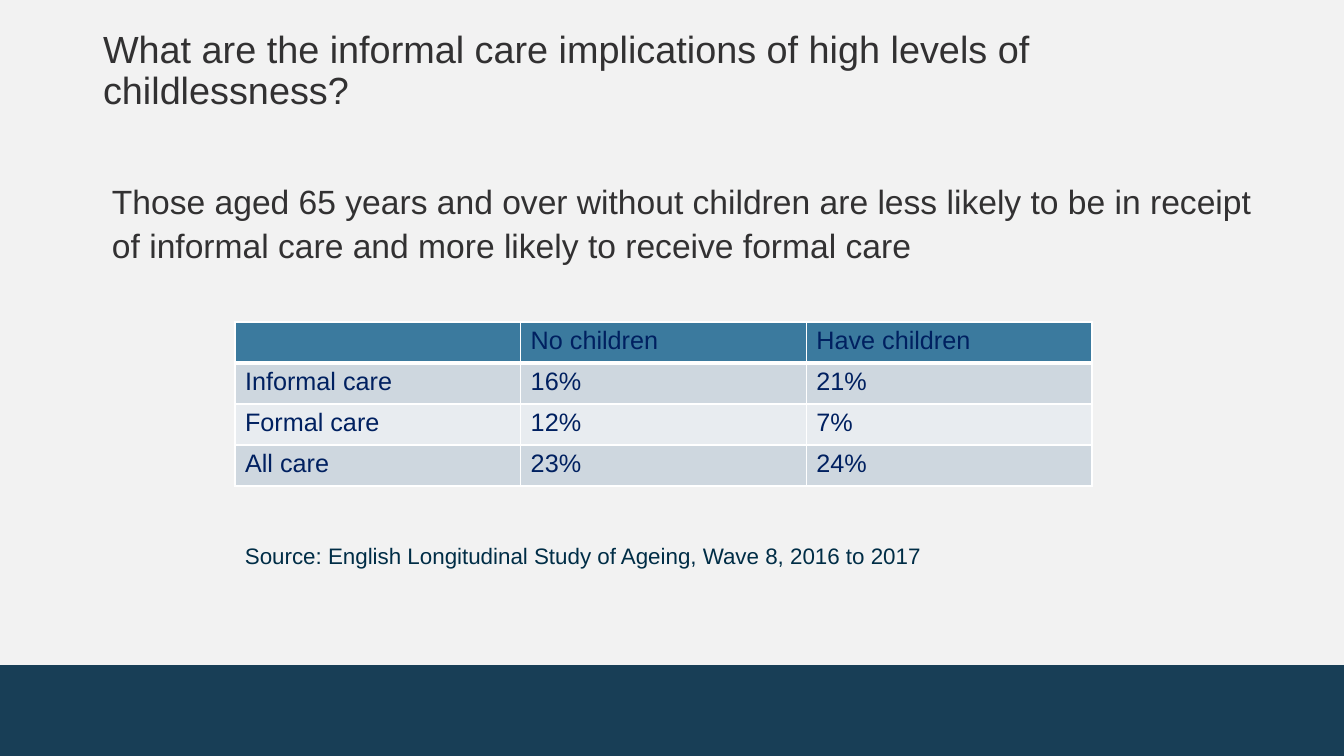
from pptx import Presentation, util as u
from pptx.dml import color
from pptx.enum import shapes, text
from pptx.oxml import xmlchemy, parse_xml
from pptx.oxml import ns

PX = 914400 / 100.8
FRAME = {"word_wrap": True, "auto_size": text.MSO_AUTO_SIZE.NONE}
NO_INSETS = dict.fromkeys(
    ("margin_left", "margin_top", "margin_right", "margin_bottom"), 0)
ROWS = [
    ("", "No children", "Have children"),
    ("Informal care", "16%", "21%"),
    ("Formal care", "12%", "7%"),
    ("All care", "23%", "24%"),
]
HEADER_FILL = "3B7A9E"
BAND_FILLS = ("E8ECF0", "CED7DF")


def px(value):
    return u.Emu(round(value * PX))


def paint(target, value):
    target.solid()
    target.fore_color.rgb = color.RGBColor.from_string(value)


def apply(target, values):
    for name, value in values.items():
        setattr(target, name, value)


def place(shape, left, top, width, height):
    box = {"left": left, "top": top, "width": width, "height": height}
    apply(shape, {name: px(value) for name, value in box.items()})


def write(frame, words, size, font_color, **layout):
    paragraph = frame.paragraphs[0]
    paragraph.text = words
    apply(paragraph, {"alignment": text.PP_ALIGN.LEFT, **layout})
    apply(paragraph.font, {"name": "Arial", "size": u.Pt(size), "bold": False})
    paint(paragraph.font.fill, font_color)
    return paragraph


def add_footer_band(slide):
    band = slide.shapes.add_shape(
        shapes.MSO_SHAPE.RECTANGLE, 0, px(665), px(1344), px(91))
    band.shadow.inherit = False
    paint(band.fill, "183E56")
    band.line.fill.background()


def fill_title(slide, words):
    title = slide.shapes.title
    place(title, 93, 26, 1159, 92)
    apply(title.text_frame, {
        **FRAME, "vertical_anchor": text.MSO_ANCHOR.MIDDLE})
    write(title.text_frame, words, 27, "323132", line_spacing=0.9)


def fill_body(slide, words):
    body = slide.placeholders[1]
    place(body, 93, 177, 1162, 409)
    apply(body.text_frame, {
        **FRAME, **NO_INSETS, "vertical_anchor": text.MSO_ANCHOR.TOP})
    properties = body.text_frame.paragraphs[0]._p.get_or_add_pPr()
    properties.set("marL", str(px(19)))
    properties.set("indent", "0")
    properties.append(xmlchemy.OxmlElement("a:buNone"))
    write(body.text_frame, words, 24, "323132", line_spacing=1.1,
          space_before=u.Pt(0), space_after=u.Pt(3.8))


def add_borders(cell, bottom):
    properties = cell._tc.get_or_add_tcPr()
    for side, width in zip("LRTB", (1, 1, 1, bottom)):
        properties.append(parse_xml(
            f'<a:ln{side} {ns.nsdecls("a")} w="{u.Pt(width)}"><a:solidFill>'
            f'<a:srgbClr val="FFFFFF"/></a:solidFill></a:ln{side}>'))


def add_care_table(slide):
    frame = slide.shapes.add_table(
        len(ROWS), len(ROWS[0]), px(235), px(322), px(857), px(164))
    table = frame.table
    apply(table, {"first_row": False, "horz_banding": False})
    for row_index, row in enumerate(ROWS):
        header = row_index == 0
        for column_index, words in enumerate(row):
            cell = table.cell(row_index, column_index)
            add_borders(cell, 3 if header else 1)
            paint(cell.fill, HEADER_FILL if header else BAND_FILLS[row_index % 2])
            write(cell.text_frame, words, 18, "002060")


def add_source(slide, words):
    box = slide.shapes.add_textbox(px(235), px(537), px(875), px(57))
    apply(box.text_frame, FRAME)
    write(box.text_frame, words, 16, "002D46")


def main():
    presentation = Presentation()
    apply(presentation, {"slide_width": px(1344), "slide_height": px(756)})
    slide = presentation.slides.add_slide(presentation.slide_layouts[1])
    paint(slide.background.fill, "F2F2F2")
    add_footer_band(slide)
    fill_title(slide, "What are the informal care implications of high levels "
                      "of childlessness?")
    fill_body(slide, "Those aged 65 years and over without children are less "
                     "likely to be in receipt of informal care and more likely "
                     "to receive formal care")
    add_care_table(slide)
    add_source(slide, "Source: English Longitudinal Study of Ageing, Wave 8, "
                      "2016 to 2017")
    presentation.save("out.pptx")


if __name__ == "__main__":
    main()
